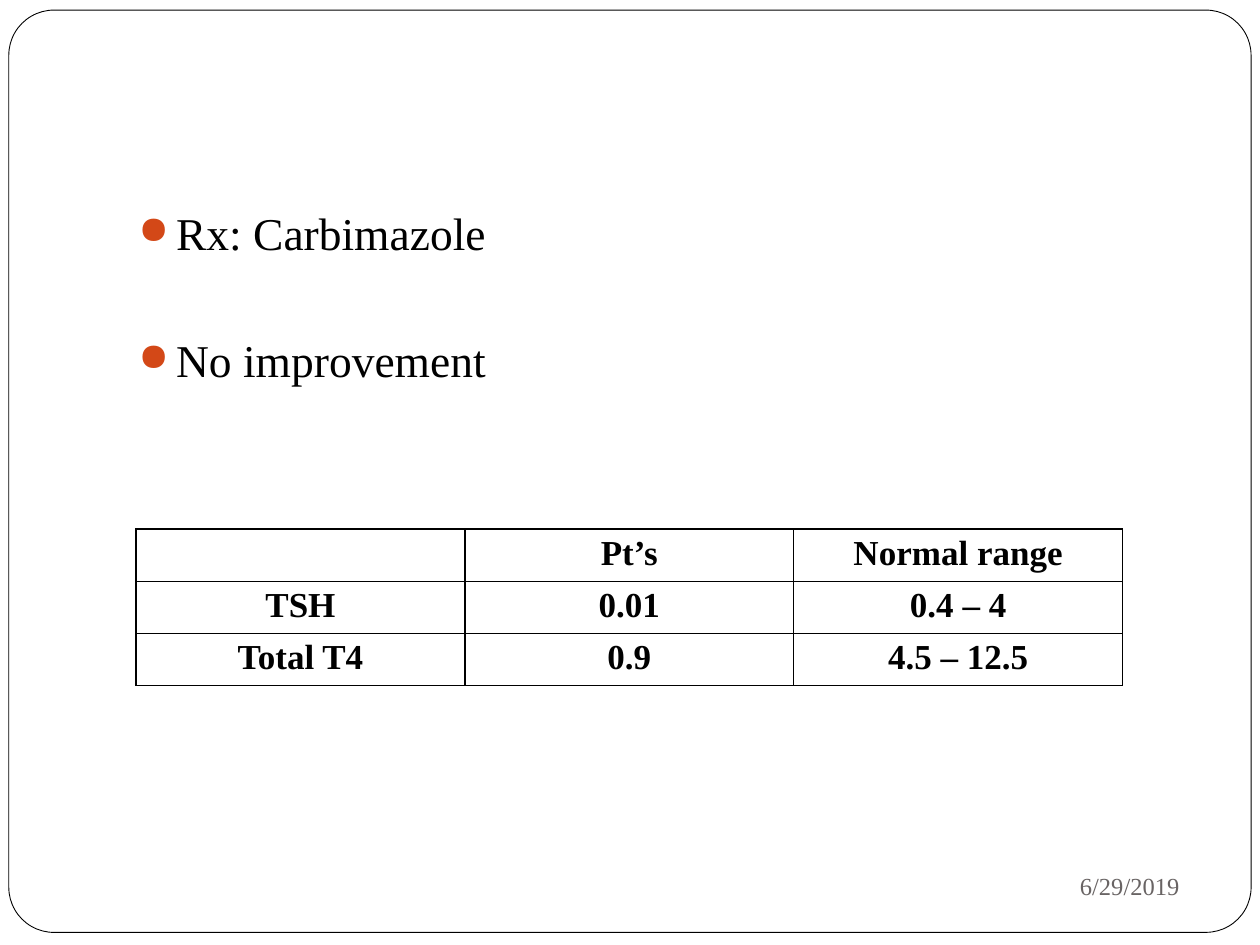
from lxml.etree import SubElement
from pptx import Presentation
from pptx.dml.color import RGBColor
from pptx.enum.shapes import MSO_SHAPE
from pptx.enum.text import MSO_ANCHOR, PP_ALIGN
from pptx.oxml.ns import qn
from pptx.util import Inches, Pt

BULLETS = ["Rx: Carbimazole", "No improvement"]
LAB_RESULTS = [
    ["", "Pt’s", "Normal range"],
    ["TSH", "0.01", "0.4 – 4"],
    ["Total T4", "0.9", "4.5 – 12.5"],
]
DATE = "6/29/2019"

COLORS = {"paper": "FFFFFF", "ink": "000000", "date": "696464", "bullet": "D34817"}
FONT = "Times New Roman"
COLUMN_WIDTH, ROW_HEIGHT = 2.61, 0.41
INDENT = Inches(0.3)


def color(name):
    return RGBColor.from_string(COLORS[name])


def write(paragraph, text, size, ink="ink", bold=False, align=PP_ALIGN.LEFT):
    paragraph.alignment = align
    font = paragraph.font
    if text:
        run = paragraph.add_run()
        run.text = text
        font = run.font
    font.name, font.size, font.bold = FONT, Pt(size), bold
    font.color.rgb = color(ink)


def add_text_box(slide, left, top, width, height, anchor=MSO_ANCHOR.TOP):
    frame = slide.shapes.add_textbox(*map(Inches, (left, top, width, height))).text_frame
    frame.word_wrap = True
    frame.vertical_anchor = anchor
    return frame


def add_bullet(paragraph):
    properties = paragraph._p.get_or_add_pPr()
    properties.set("marL", str(INDENT))
    properties.set("indent", str(-INDENT))
    bullet_color = SubElement(properties, qn("a:buClr"))
    SubElement(bullet_color, qn("a:srgbClr"), val=COLORS["bullet"])
    SubElement(properties, qn("a:buSzPct"), val="85000")
    SubElement(properties, qn("a:buChar"), char="●")


def add_borders(cell):
    """Draw all four sides; the lines must precede the fill in the XML."""
    properties = cell._tc.get_or_add_tcPr()
    for position, side in enumerate(("lnL", "lnR", "lnT", "lnB")):
        line = SubElement(properties, qn(f"a:{side}"), w=str(Pt(1)))
        fill = SubElement(line, qn("a:solidFill"))
        SubElement(fill, qn("a:srgbClr"), val=COLORS["ink"])
        properties.insert(position, line)


def add_frame(slide):
    frame = slide.shapes.add_shape(
        MSO_SHAPE.ROUNDED_RECTANGLE, *map(Inches, (0.07, 0.08, 9.86, 7.32)))
    frame.adjustments[0] = 0.049
    frame.shadow.inherit = False
    frame.fill.solid()
    frame.fill.fore_color.rgb = color("paper")
    frame.line.color.rgb = color("ink")
    frame.line.width = Pt(0.5)


def add_bullets(slide):
    frame = add_text_box(slide, 1, 1.58, 8.5, 2.4)
    for index, text in enumerate(BULLETS):
        paragraph = frame.add_paragraph() if index else frame.paragraphs[0]
        paragraph.space_before = Pt(41.5 if index else 5.8)
        add_bullet(paragraph)
        write(paragraph, text, 26)


def add_lab_table(slide):
    rows, columns = len(LAB_RESULTS), len(LAB_RESULTS[0])
    table = slide.shapes.add_table(
        rows, columns, Inches(1.08), Inches(4.2),
        Inches(columns * COLUMN_WIDTH), Inches(rows * ROW_HEIGHT)).table
    table.first_row = table.horz_banding = False
    for column in table.columns:
        column.width = Inches(COLUMN_WIDTH)
    for row, values in zip(table.rows, LAB_RESULTS):
        row.height = Inches(ROW_HEIGHT)
        for cell, value in zip(row.cells, values):
            cell.margin_top = cell.margin_bottom = Inches(0.04)
            cell.fill.background()
            add_borders(cell)
            write(cell.text_frame.paragraphs[0], value, 20, bold=True,
                  align=PP_ALIGN.CENTER)


def main():
    presentation = Presentation()
    presentation.slide_width, presentation.slide_height = Inches(10), Inches(7.5)
    slide = presentation.slides.add_slide(presentation.slide_layouts[6])
    add_frame(slide)
    date = add_text_box(slide, 6.75, 6.77, 2.71, 0.52, MSO_ANCHOR.MIDDLE)
    write(date.paragraphs[0], DATE, 14, ink="date", align=PP_ALIGN.RIGHT)
    add_bullets(slide)
    add_lab_table(slide)
    presentation.save("out.pptx")


if __name__ == "__main__":
    main()
